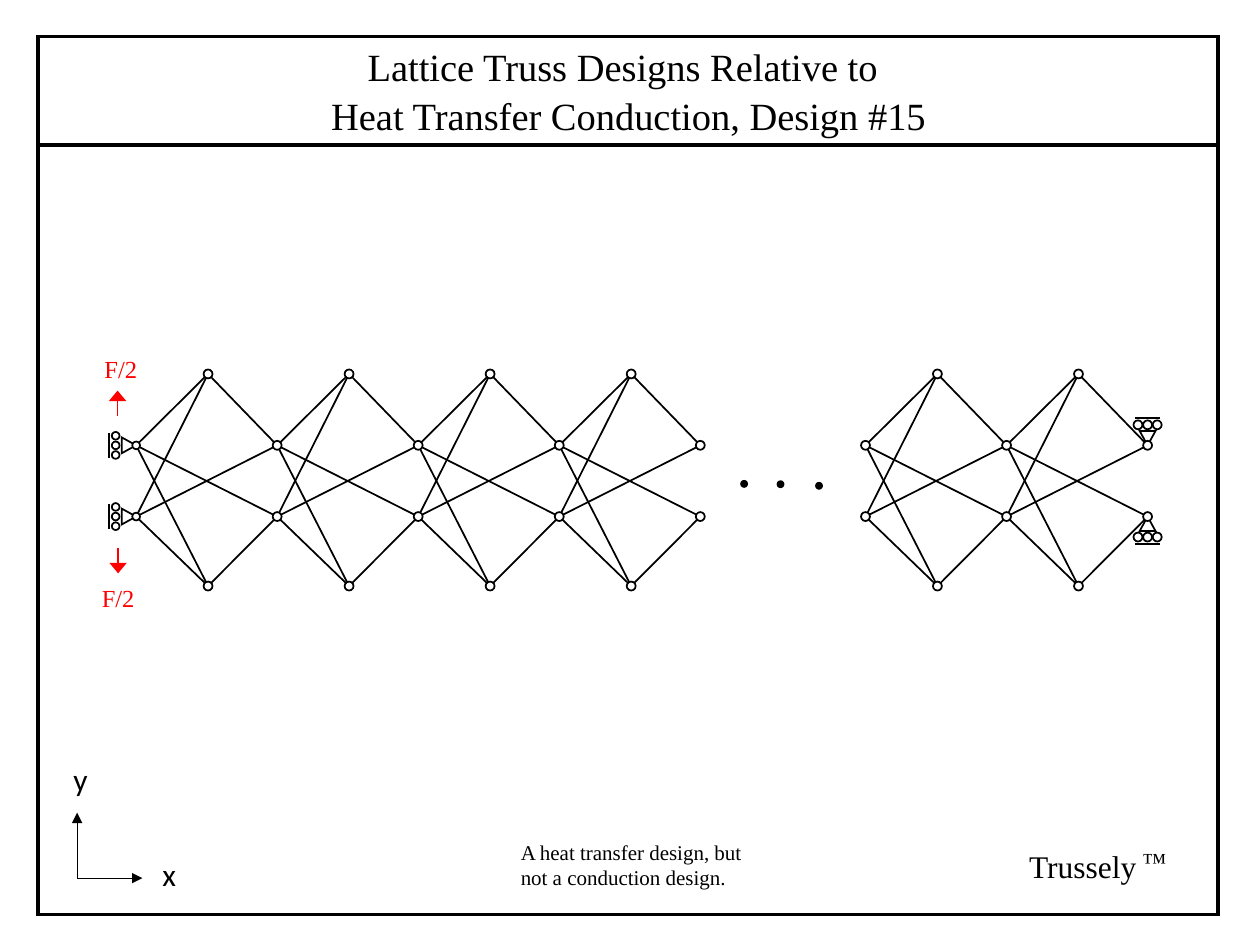
from dataclasses import dataclass

from lxml import etree
from pptx import Presentation
from pptx.dml.color import RGBColor
from pptx.enum import shapes, text
from pptx.oxml.ns import qn
from pptx.util import Pt


@dataclass(frozen=True)
class Theme:
    ink: RGBColor = RGBColor(0, 0, 0)
    paper: RGBColor = RGBColor(255, 255, 255)
    force: RGBColor = RGBColor(255, 0, 0)
    serif: str = "Times New Roman"
    sans: str = "Calibri"
    title: int = 22
    label: int = 18
    small: int = 14
    note: int = 12
    frame: float = 2
    member: float = 1
    dot: float = 0.75
    axis: float = 0.5


THEME = Theme()

PITCH = 80.6
APEX_SHIFT = 0.8
TOP_APEX, UPPER, LOWER, BOTTOM_APEX = 213.7, 254.5, 295.2, 334.9
LEFT_RUN, LEFT_BAYS = 77.8, 4
RIGHT_RUN, RIGHT_BAYS = 494.6, 2
RIGHT_END = RIGHT_RUN + PITCH * RIGHT_BAYS
RING = 5.1
SMALL_RING = 4.4


def add_line(slide, start, end, width=THEME.member, color=THEME.ink, head_width=None):
    """Draw a straight line; head_width adds a triangle at its end."""
    line = slide.shapes.add_connector(
        shapes.MSO_CONNECTOR.STRAIGHT, *(Pt(value) for value in (*start, *end)))
    line.line.color.rgb = color
    line.line.width = Pt(width)
    properties = line._element.spPr
    if head_width:
        etree.SubElement(properties.find(qn("a:ln")), qn("a:tailEnd"),
                         type="triangle", w=head_width, len="med")
    etree.SubElement(properties, qn("a:effectLst"))


def style_shape(shape, fill=None, width=THEME.member):
    shape.shadow.inherit = False
    if fill is None:
        shape.fill.background()
    else:
        shape.fill.solid()
        shape.fill.fore_color.rgb = fill
    shape.line.color.rgb = THEME.ink
    shape.line.width = Pt(width)
    etree.SubElement(shape._element.spPr.find(qn("a:ln")), qn("a:miter"), lim="800000")


def add_circle(slide, center, diameter=RING, fill=THEME.paper, width=THEME.member):
    x, y = center
    circle = slide.shapes.add_shape(
        shapes.MSO_SHAPE.OVAL, Pt(x - diameter / 2), Pt(y - diameter / 2),
        Pt(diameter), Pt(diameter))
    style_shape(circle, fill, width)


def add_text(slide, box, lines, size, font=THEME.serif, color=THEME.ink, wrap=False):
    text_box = slide.shapes.add_textbox(*(Pt(value) for value in box))
    frame = text_box.text_frame
    frame.word_wrap = wrap
    frame.text = "\n".join(lines)
    for paragraph in frame.paragraphs:
        for run in paragraph.runs:
            run.font.size = Pt(size)
            run.font.name = font
            run.font.color.rgb = color
    return frame


def add_frame(slide):
    left, top, width, height = 21.6, 20.9, 674.6, 501.6
    border = slide.shapes.add_shape(
        shapes.MSO_SHAPE.RECTANGLE, Pt(left), Pt(top), Pt(width), Pt(height))
    style_shape(border, width=THEME.frame)
    add_line(slide, (left, 82.8), (left + width, 82.8), THEME.frame)


def add_title(slide):
    frame = add_text(slide, (182.2, 15.1, 357.8, 67.7),
                     ["Lattice Truss Designs Relative to",
                      "Heat Transfer Conduction, Design #15"], THEME.title)
    frame.vertical_anchor = text.MSO_ANCHOR.BOTTOM
    frame.margin_bottom = Pt(3.9)
    first, second = frame.paragraphs
    first._p.get_or_add_pPr().set("marL", str(Pt(20.8)))
    second.space_before = Pt(1.5)


def add_truss(slide, start, bays, supported):
    """Draw the members of every bay, then the joints without a support."""
    columns = [start + PITCH * index for index in range(bays + 1)]
    joints = [(x, y) for x in columns if x != supported for y in (UPPER, LOWER)]
    for left, right in zip(columns, columns[1:]):
        middle = (left + right) / 2 + APEX_SHIFT
        top, bottom = (middle, TOP_APEX), (middle, BOTTOM_APEX)
        upper_left, lower_left = (left, UPPER), (left, LOWER)
        upper_right, lower_right = (right, UPPER), (right, LOWER)
        members = [(upper_left, top), (top, upper_right), (lower_left, top),
                   (lower_left, bottom), (bottom, lower_right), (upper_left, bottom),
                   (upper_left, lower_right), (lower_left, upper_right)]
        for member in members:
            add_line(slide, *member)
        joints += [top, bottom]
    for joint in joints:
        add_circle(slide, joint)


def add_roller_support(slide, pin, outward, ring):
    """Draw triangle, rollers and rail, going outward from the pin."""
    out_x, out_y = outward

    def place(along, across):
        return (pin[0] + out_x * along - out_y * across,
                pin[1] + out_y * along + out_x * across)

    corners = [tuple(Pt(value) for value in place(*offset))
               for offset in ((0, 0), (8.2, 4.5), (8.2, -4.5))]
    builder = slide.shapes.build_freeform(*corners[0])
    builder.add_line_segments(corners[1:], close=True)
    style_shape(builder.convert_to_shape())
    for across in (-5.5, 0, 5.5):
        add_circle(slide, place(11.7, across), ring)
    add_line(slide, place(15.7, -7), place(15.7, 7))
    add_circle(slide, pin, ring)


def add_supports(slide):
    for y, vertical in ((UPPER, -1), (LOWER, 1)):
        add_roller_support(slide, (LEFT_RUN, y), (-1, 0), SMALL_RING)
        add_roller_support(slide, (RIGHT_END, y), (0, vertical), RING)


def add_forces(slide):
    for x, start, end, box in ((67.2, 237.6, 223.2, (52.6, 198.7, 35.3, 24.5)),
                               (67.5, 313.2, 327.6, (51.1, 329.8, 33.1, 24.5))):
        add_line(slide, (x, start), (x, end), color=THEME.force, head_width="lg")
        add_text(slide, box, ["F/2"], THEME.small, color=THEME.force)


def add_ellipsis(slide):
    for center in ((425.2, 276.5), (446, 276.7), (468, 277.6)):
        add_circle(slide, center, 3.7, THEME.ink, THEME.dot)


def add_axes(slide):
    origin = (44.1, 501.8)
    for end, name, box in (((81.4, 501.8), "x", (85.7, 485, 22.3, 28.8)),
                           ((44.1, 464.4), "y", (34.8, 430.6, 22.3, 28.8))):
        add_line(slide, origin, end, THEME.axis, head_width="med")
        add_text(slide, box, [name], THEME.label, THEME.sans)


def add_footer(slide):
    add_text(slide, (290.5, 476.3, 150.5, 36),
             ["A heat transfer design, but not a conduction design."],
             THEME.note, wrap=True)
    add_text(slide, (581, 480.7, 78.5, 28.8), ["Trussely"], THEME.label)
    add_text(slide, (645.8, 480.2, 41, 28.8), ["™"], THEME.small)


def main():
    presentation = Presentation()
    presentation.slide_width, presentation.slide_height = Pt(720), Pt(540)
    slide = presentation.slides.add_slide(presentation.slide_layouts[6])
    add_frame(slide)
    add_truss(slide, LEFT_RUN, LEFT_BAYS, supported=LEFT_RUN)
    add_truss(slide, RIGHT_RUN, RIGHT_BAYS, supported=RIGHT_END)
    add_supports(slide)
    add_forces(slide)
    add_ellipsis(slide)
    add_axes(slide)
    add_title(slide)
    add_footer(slide)
    presentation.save("out.pptx")


if __name__ == "__main__":
    main()
